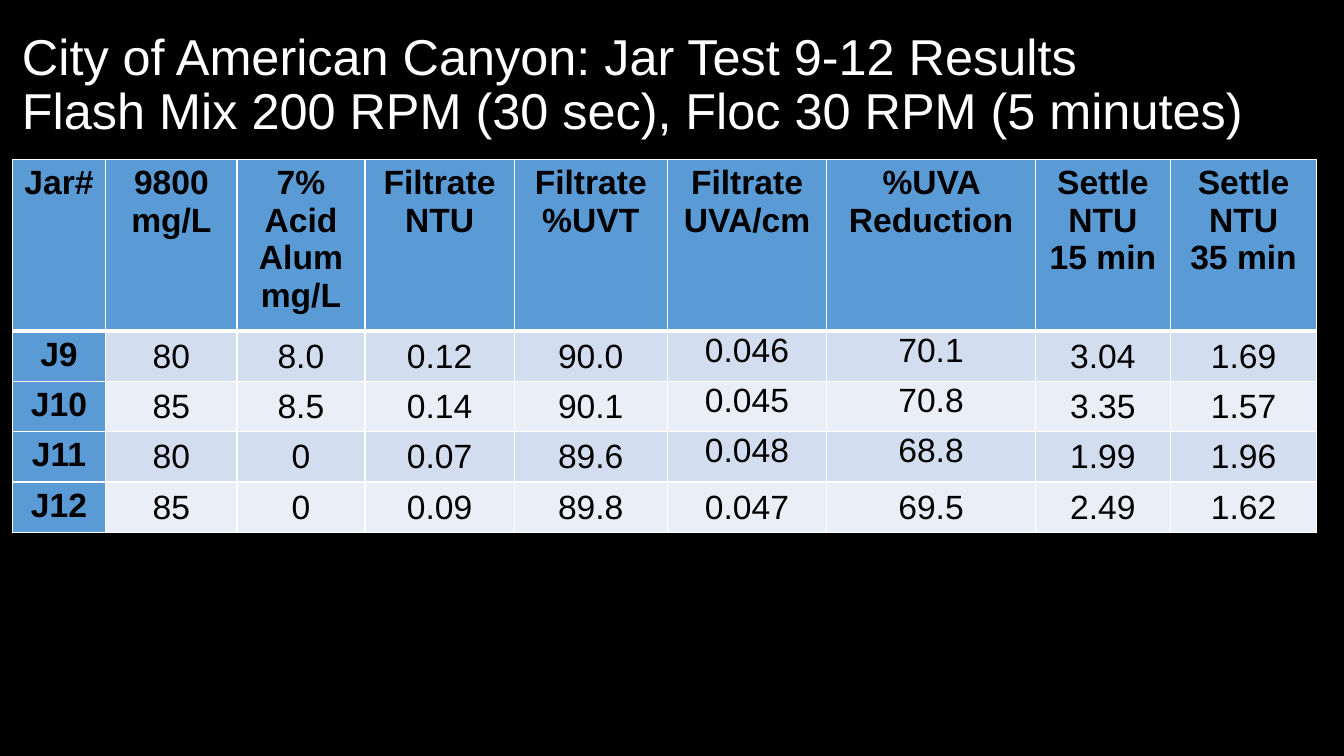
from lxml import etree
from pptx import Presentation
from pptx import util as u
from pptx.dml.color import RGBColor
from pptx.enum import text
from pptx.oxml import ns

COLORS = {
    "background": "000000",
    "title": "FFFFFF",
    "text": "000000",
    "border": "FFFFFF",
    "header": "5B9BD5",
    "odd_row": "D2DEEF",
    "even_row": "EAEFF7",
}
FONT = "Arial"
TITLE_LINES = [
    "City of American Canyon: Jar Test 9-12 Results",
    "Flash Mix 200 RPM (30 sec), Floc 30 RPM (5 minutes)",
]
HEADERS = [
    ["Jar#"],
    ["9800", "mg/L"],
    ["7% Acid Alum", "mg/L"],
    ["Filtrate", "NTU"],
    ["Filtrate", "%UVT"],
    ["Filtrate", "UVA/cm"],
    ["%UVA Reduction"],
    ["Settle", "NTU", "15 min"],
    ["Settle", "NTU", "35 min"],
]
RESULTS = [
    ["J9", "80", "8.0", "0.12", "90.0", "0.046", "70.1", "3.04", "1.69"],
    ["J10", "85", "8.5", "0.14", "90.1", "0.045", "70.8", "3.35", "1.57"],
    ["J11", "80", "0", "0.07", "89.6", "0.048", "68.8", "1.99", "1.96"],
    ["J12", "85", "0", "0.09", "89.8", "0.047", "69.5", "2.49", "1.62"],
]
COLUMN_WIDTHS = [0.93, 1.3, 1.27, 1.48, 1.52, 1.58, 2.07, 1.34, 1.45]
HEADER_HEIGHT = 1.58
ROW_HEIGHT = 0.47
UVA_COLUMNS = (5, 6)


def color(name):
    return RGBColor.from_string(COLORS[name])


def add_run(paragraph, words, size, color_name, bold=False):
    run = paragraph.add_run()
    run.text = words
    run.font.name = FONT
    run.font.size = u.Pt(size)
    run.font.bold = bold
    run.font.color.rgb = color(color_name)


def add_title(slide, left, top, width, height):
    shape = slide.shapes.add_textbox(*map(u.Inches, (left, top, width, height)))
    frame = shape.text_frame
    frame.word_wrap = True
    frame.vertical_anchor = text.MSO_ANCHOR.MIDDLE
    paragraph = frame.paragraphs[0]
    paragraph.line_spacing = 0.9
    for index, line in enumerate(TITLE_LINES):
        if index:
            paragraph.add_line_break()
        add_run(paragraph, line, 36, "title")


def set_borders(cell, top, bottom):
    properties = cell._tc.get_or_add_tcPr()
    for side, points in (("L", 1), ("R", 1), ("T", top), ("B", bottom)):
        line = etree.SubElement(properties, ns.qn(f"a:ln{side}"), w=str(u.Pt(points)))
        fill = etree.SubElement(line, ns.qn("a:solidFill"))
        etree.SubElement(fill, ns.qn("a:srgbClr"), val=COLORS["border"])


def fill_cell(cell, lines, fill_name, bold):
    cell.fill.solid()
    cell.fill.fore_color.rgb = color(fill_name)
    frame = cell.text_frame
    for index, line in enumerate(lines):
        paragraph = frame.add_paragraph() if index else frame.paragraphs[0]
        paragraph.alignment = text.PP_ALIGN.CENTER
        add_run(paragraph, line, 24, "text", bold)


def set_value_layout(cell, anchor):
    cell.margin_left = cell.margin_right = cell.margin_top = u.Inches(0.01)
    cell.margin_bottom = 0
    cell.vertical_anchor = anchor


def add_results_table(slide, left, top):
    rows = [HEADERS] + [[[value] for value in row] for row in RESULTS]
    height = HEADER_HEIGHT + ROW_HEIGHT * len(RESULTS)
    box = map(u.Inches, (left, top, sum(COLUMN_WIDTHS), height))
    table = slide.shapes.add_table(len(rows), len(HEADERS), *box).table
    table.first_col = True
    for column, width in zip(table.columns, COLUMN_WIDTHS):
        column.width = u.Inches(width)
    for row_index, row in enumerate(rows):
        is_header = row_index == 0
        table.rows[row_index].height = u.Inches(HEADER_HEIGHT if is_header else ROW_HEIGHT)
        for column_index, lines in enumerate(row):
            cell = table.cell(row_index, column_index)
            is_label = is_header or column_index == 0
            stripe = "odd_row" if row_index % 2 else "even_row"
            set_borders(cell, 3 if row_index == 1 else 1, 3 if is_header else 1)
            fill_cell(cell, lines, "header" if is_label else stripe, is_label)
            if not is_label:
                at_top = column_index in UVA_COLUMNS and row_index < len(RESULTS)
                set_value_layout(cell, text.MSO_ANCHOR.TOP if at_top else text.MSO_ANCHOR.MIDDLE)


def main():
    presentation = Presentation()
    presentation.slide_width = u.Inches(13.33)
    presentation.slide_height = u.Inches(7.5)
    slide = presentation.slides.add_slide(presentation.slide_layouts[6])
    slide.background.fill.solid()
    slide.background.fill.fore_color.rgb = color("background")
    add_title(slide, 0.12, 0.13, 13.03, 1.45)
    add_results_table(slide, 0.12, 1.58)
    presentation.save("out.pptx")


if __name__ == "__main__":
    main()
